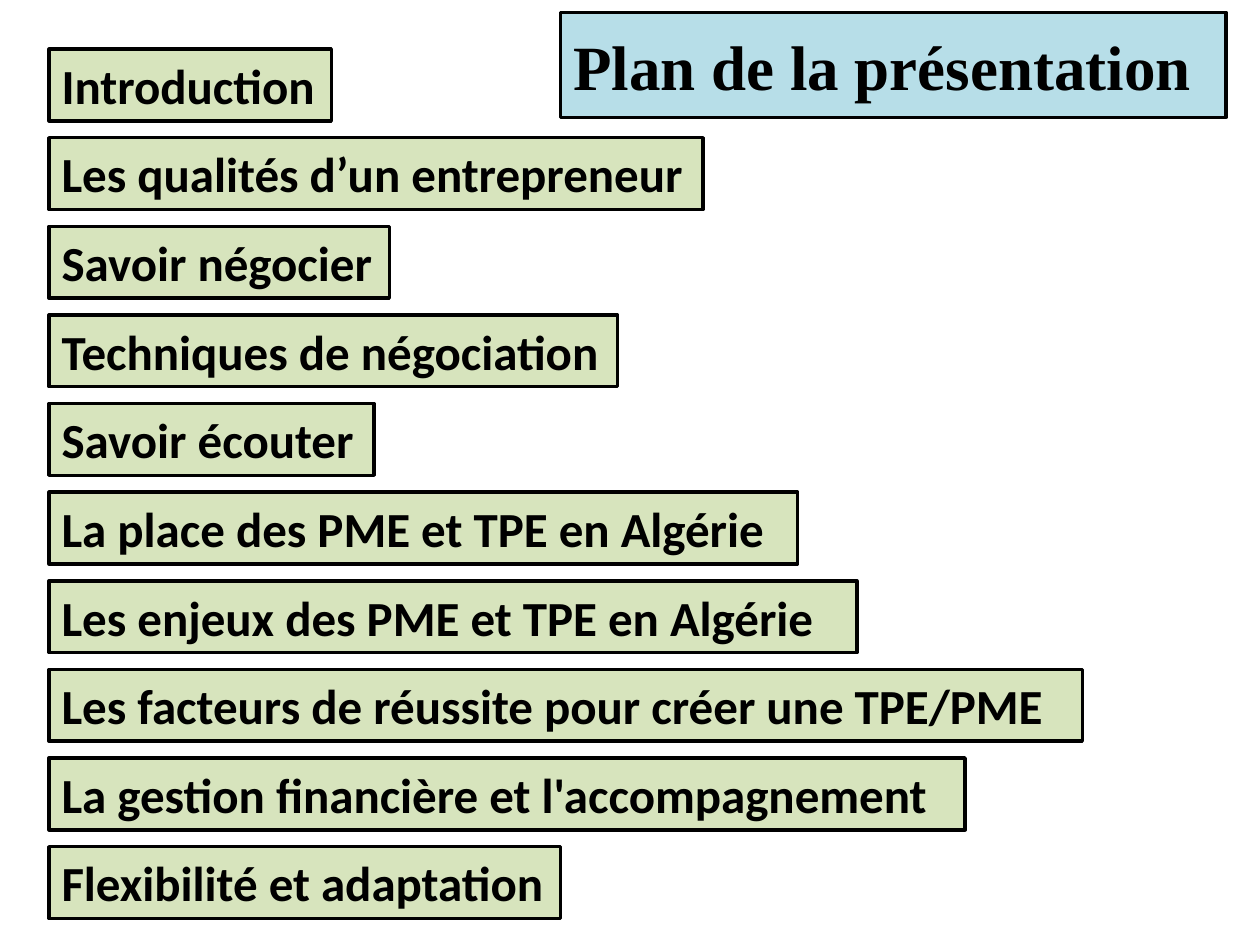
import pptx
import pptx.util
import pptx.dml.color
import pptx.enum.text


def color(hex_string):
    return pptx.dml.color.RGBColor.from_string(hex_string)


class PlanSlide:
    """Style, row grid and current slide of a presentation plan."""

    ink = "000000"
    title_fill = "B7DEE8"
    topic_fill = "D7E4BD"
    left, top, height = 0.39, 0.39, 0.57
    last_top = 6.72

    def __init__(self, prs, rows):
        self.s = prs.slides.add_slide(prs.slide_layouts[5])
        self.pitch = (self.last_top - self.top) / (rows - 1)

    def format_box(self, sp, text, fill, font, size, anchor):
        sp.fill.solid()
        sp.fill.fore_color.rgb = color(fill)
        sp.line.color.rgb = color(self.ink)
        sp.line.width = pptx.util.Pt(2)
        tf = sp.text_frame
        tf.word_wrap = True
        tf.auto_size = pptx.enum.text.MSO_AUTO_SIZE.SHAPE_TO_FIT_TEXT
        tf.vertical_anchor = anchor
        p = tf.paragraphs[0]
        p.alignment = pptx.enum.text.PP_ALIGN.LEFT
        r = p.add_run()
        r.text = text
        r.font.name = font
        r.font.size = pptx.util.Pt(size)
        r.font.bold = True
        r.font.color.rgb = color(self.ink)

    def title(self, text, left, top, width, height):
        sp = self.s.shapes.title
        sp.left, sp.top, sp.width, sp.height = map(
            pptx.util.Inches, (left, top, width, height))
        self.format_box(sp, text, self.title_fill, "Times New Roman", 36,
                        pptx.enum.text.MSO_ANCHOR.MIDDLE)

    def topic(self, row, text, width):
        box = (self.left, self.top + row * self.pitch, width, self.height)
        sp = self.s.shapes.add_textbox(*map(pptx.util.Inches, box))
        self.format_box(sp, text, self.topic_fill, "Calibri", 28,
                        pptx.enum.text.MSO_ANCHOR.TOP)


TOPICS = [
    ("Introduction", 2.24),
    ("Les qualités d’un entrepreneur", 5.19),
    ("Savoir négocier", 2.7),
    ("Techniques de négociation", 4.51),
    ("Savoir écouter", 2.58),
    ("La place des PME et TPE en Algérie", 5.94),
    ("Les enjeux des PME et TPE en Algérie", 6.41),
    ("Les facteurs de réussite pour créer une TPE/PME", 8.2),
    ("La gestion financière et l'accompagnement", 7.27),
    ("Flexibilité et adaptation", 4.06),
]


def main():
    prs = pptx.Presentation()
    prs.slide_width = pptx.util.Inches(10)
    prs.slide_height = pptx.util.Inches(7.5)
    plan = PlanSlide(prs, len(TOPICS))
    plan.title("Plan de la présentation", 4.45, 0.16, 5.28, 0.71)
    for row, (text, width) in enumerate(TOPICS):
        plan.topic(row, text, width)
    prs.save("out.pptx")


if __name__ == "__main__":
    main()
